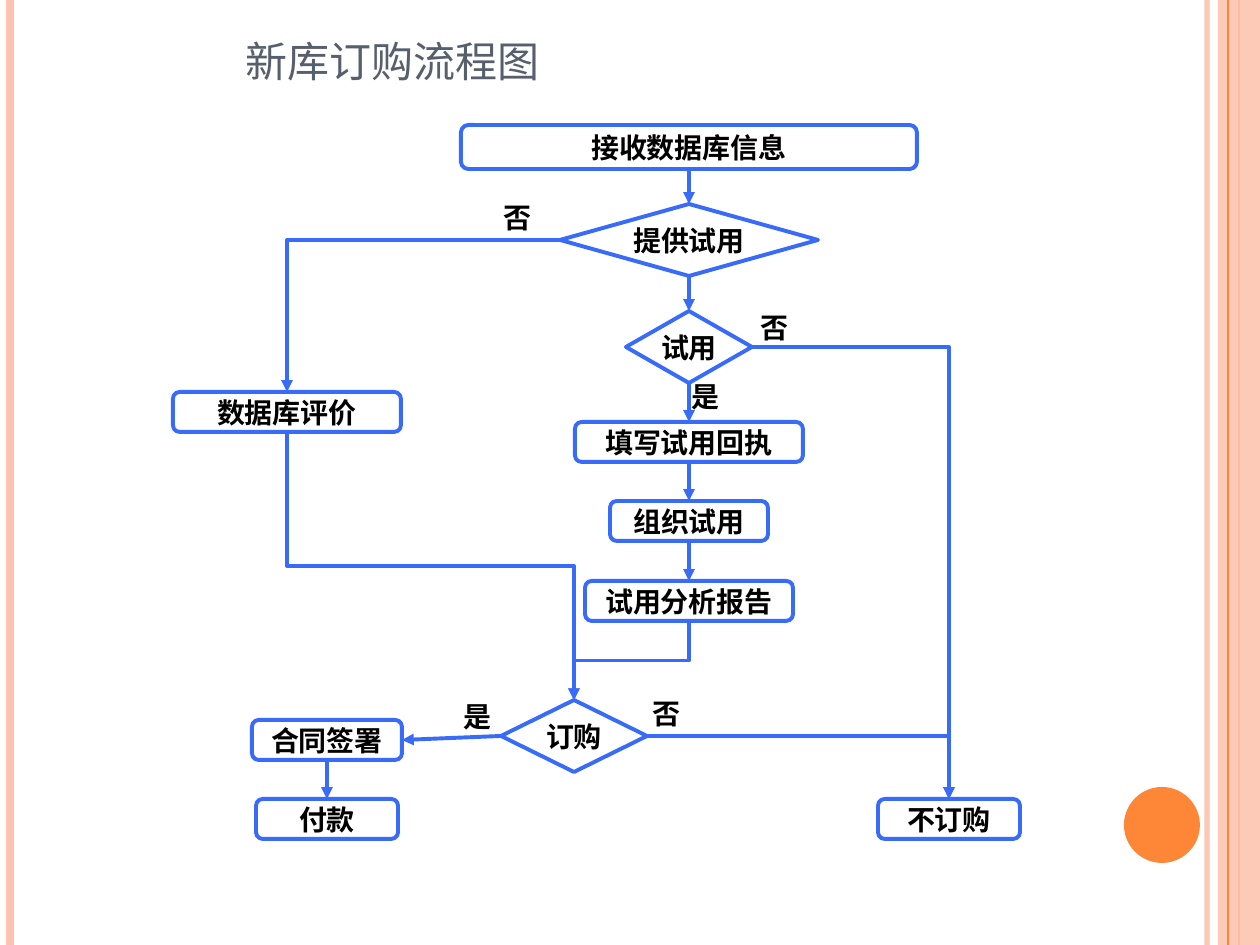
from dataclasses import dataclass

from pptx import Presentation
from pptx.dml.color import RGBColor
from pptx.enum.shapes import MSO_CONNECTOR, MSO_SHAPE
from pptx.enum.text import MSO_ANCHOR, PP_ALIGN
from pptx.oxml.ns import qn
from pptx.oxml.xmlchemy import OxmlElement
from pptx.util import Pt

EMU_PER_PX = 914400 / 126
TOP, LEFT, BOTTOM, RIGHT = range(4)


@dataclass(frozen=True)
class Theme:
    flow: str = "396BF9"
    ink: str = "000000"
    title: str = "575F6D"
    accent: str = "FE8637"
    tint: str = "FEC3AE"
    title_size: int = 30
    body_size: int = 16
    flow_width: float = 2.25
    title_font: str = "TeX Gyre Schola"
    node_font: str = "Times New Roman"
    label_font: str = "Lato"


def emu(px):
    return round(px * EMU_PER_PX)


def paint(color, value, opacity=100):
    color.rgb = RGBColor.from_string(value)


def set_opacity(element, percent):
    alpha = OxmlElement("a:alpha")
    alpha.set("val", str(percent * 1000))
    next(element.iter(qn("a:srgbClr"))).append(alpha)


def write(shape, text, *, font, size, color, bold=False, small_caps=False,
          align=PP_ALIGN.LEFT, anchor=MSO_ANCHOR.TOP, margins=None):
    frame = shape.text_frame
    frame.word_wrap = True
    frame.vertical_anchor = anchor
    if margins:
        frame.margin_left = frame.margin_right = emu(margins[0])
        frame.margin_top = frame.margin_bottom = emu(margins[1])
    para = frame.paragraphs[0]
    para.alignment = align
    span = para.add_run()
    span.text = text
    span.font.name = font
    span.font.size = Pt(size)
    span.font.bold = bold
    span.font.color.rgb = RGBColor.from_string(color)
    if small_caps:
        span.font._element.set("cap", "small")


class FlowPage:
    """Draws styled flowchart elements on one slide."""

    def __init__(self, page, theme):
        self.page = page
        self.theme = theme

    def shape(self, kind, left, top, width, height, fill=None, opacity=100):
        box = self.page.shapes.add_shape(kind, *map(emu, (left, top, width, height)))
        box.shadow.inherit = False
        box.line.fill.background()
        if fill is None:
            box.fill.background()
        else:
            box.fill.solid()
            box.fill.fore_color.rgb = RGBColor.from_string(fill)
            if opacity < 100:
                set_opacity(box.element.spPr, opacity)
        return box

    def node(self, text, center, top, width, height=40,
             kind=MSO_SHAPE.FLOWCHART_ALTERNATE_PROCESS):
        box = self.shape(kind, center - width // 2, top, width, height)
        box.line.color.rgb = RGBColor.from_string(self.theme.flow)
        box.line.width = Pt(self.theme.flow_width)
        write(box, text, font=self.theme.node_font, size=self.theme.body_size,
              color=self.theme.ink, bold=True, align=PP_ALIGN.CENTER,
              anchor=MSO_ANCHOR.MIDDLE, margins=(2, 0))
        return box

    def decision(self, text, center, top, width):
        return self.node(text, center, top, width, 72, MSO_SHAPE.FLOWCHART_DECISION)

    def textbox(self, text, left, top, width, height, **style):
        box = self.page.shapes.add_textbox(*map(emu, (left, top, width, height)))
        write(box, text, **style)

    def label(self, text, left, top):
        self.textbox(text, left, top, 59, 47, font=self.theme.label_font,
                     size=self.theme.body_size, color=self.theme.ink, bold=True)

    def style_line(self, line, color, width, opacity=100):
        line.line.color.rgb = RGBColor.from_string(color)
        line.line.width = Pt(width)
        if opacity < 100:
            set_opacity(line.element.spPr, opacity)
        line.element.spPr.append(OxmlElement("a:effectLst"))

    def stripe(self, x, color, width, opacity=100):
        line = self.page.shapes.add_connector(
            MSO_CONNECTOR.STRAIGHT, emu(x), 0, emu(x), emu(945))
        self.style_line(line, color, width, opacity)

    def arrow(self, source, target, start=BOTTOM, end=TOP, bends=0):
        kind = MSO_CONNECTOR.ELBOW if bends else MSO_CONNECTOR.STRAIGHT
        line = self.page.shapes.add_connector(kind, 0, 0, 0, 0)
        line.begin_connect(source, start)
        line.end_connect(target, end)
        self.style_line(line, self.theme.flow, self.theme.flow_width)
        head = OxmlElement("a:tailEnd")
        head.set("type", "triangle")
        line.element.spPr.find(qn("a:ln")).append(head)
        if bends == 1:
            line.element.spPr.find(qn("a:prstGeom")).set("prst", "bentConnector2")
        elif bends == 2:
            self.turn_downward(line)

    def turn_downward(self, line):
        rightward = line.end_x > line.begin_x
        center_x = (line.begin_x + line.end_x) // 2
        center_y = (line.begin_y + line.end_y) // 2
        line.width, line.height = line.height, line.width
        line.left = center_x - line.width // 2
        line.top = center_y - line.height // 2
        frame = line.element.spPr.find(qn("a:xfrm"))
        frame.set("rot", str((270 if rightward else 90) * 60000))
        frame.set("flipH", "1" if rightward else "0")


def draw_backdrop(flow):
    theme = flow.theme
    flow.stripe(1207, theme.tint, 3, opacity=93)
    flow.stripe(10, theme.tint, 4.5)
    flow.stripe(1239, theme.accent, 1.5)
    flow.shape(MSO_SHAPE.RECTANGLE, 1218, 0, 42, 945, theme.tint, opacity=87)
    flow.stripe(1228, theme.accent, 0.75)
    flow.shape(MSO_SHAPE.OVAL, 1124, 787, 76, 76, theme.accent)
    flow.textbox("新库订购流程图", 233, 0, 504, 94, font=theme.title_font,
                 size=theme.title_size, color=theme.title, small_caps=True,
                 anchor=MSO_ANCHOR.BOTTOM)


def draw_flow(flow):
    main, contract = 689, 327
    receive = flow.node("接收数据库信息", main, 125, 456, 44)
    offered = flow.decision("提供试用", main, 204, 258)
    trial = flow.decision("试用", main, 311, 126)
    receipt = flow.node("填写试用回执", main, 422, 228)
    organise = flow.node("组织试用", main, 501, 158)
    report = flow.node("试用分析报告", main, 581, 208)
    order = flow.decision("订购", 574, 700, 146)
    evaluate = flow.node("数据库评价", 287, 392, 228)
    sign = flow.node("合同签署", contract, 720, 150)
    pay = flow.node("付款", contract, 799, 142)
    decline = flow.node("不订购", 949, 799, 142)

    steps = [receive, offered, trial, receipt, organise, report]
    for source, target in [*zip(steps, steps[1:]), (sign, pay)]:
        flow.arrow(source, target)
    flow.arrow(order, sign, LEFT, RIGHT)
    flow.arrow(offered, evaluate, LEFT, bends=1)
    for source in (trial, order):
        flow.arrow(source, decline, RIGHT, bends=1)
    for source in (report, evaluate):
        flow.arrow(source, order, bends=2)

    for text, left, top in [("否", 491, 194), ("是", 679, 373), ("否", 748, 304),
                            ("否", 640, 690), ("是", 451, 693)]:
        flow.label(text, left, top)


def main():
    deck = Presentation()
    deck.slide_width, deck.slide_height = emu(1260), emu(945)
    page = deck.slides.add_slide(deck.slide_layouts[6])
    flow = FlowPage(page, Theme())
    draw_backdrop(flow)
    draw_flow(flow)
    deck.save("out.pptx")


if __name__ == "__main__":
    main()
